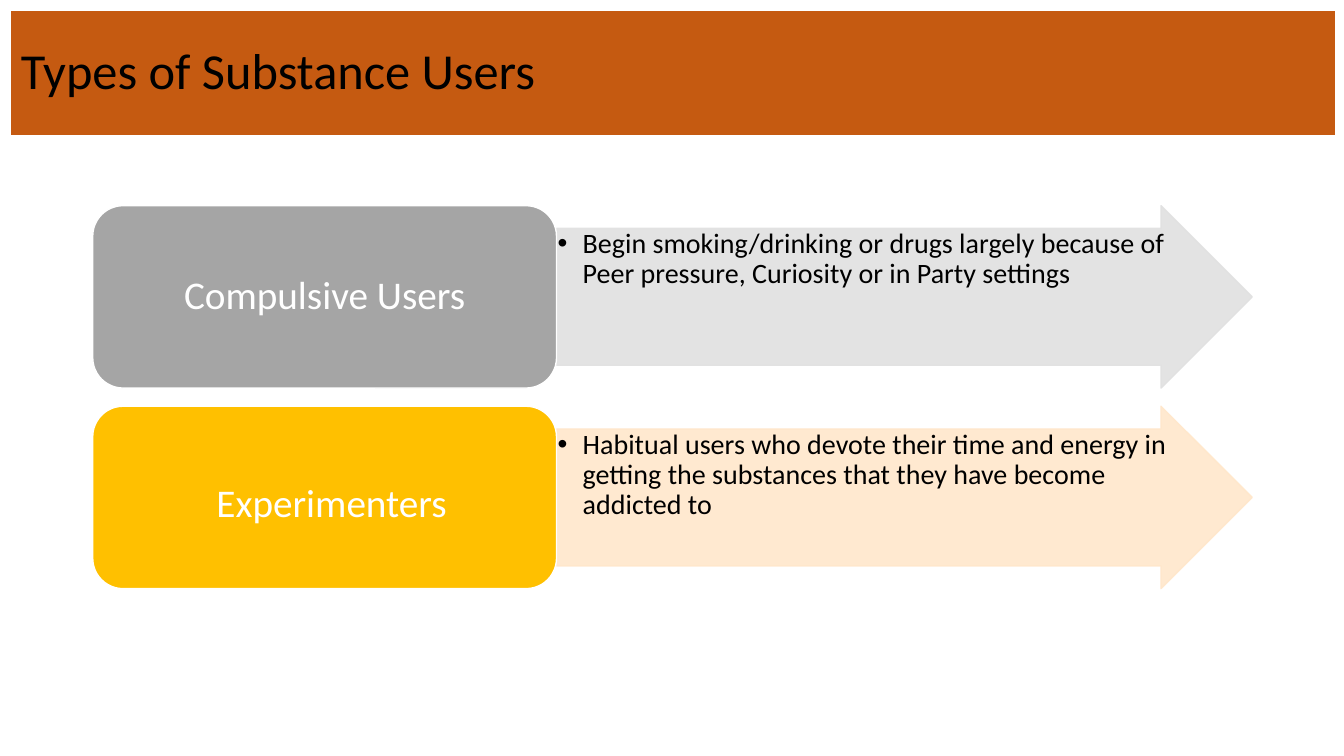
from lxml import etree
from pptx import Presentation
from pptx.dml.color import RGBColor
from pptx.enum.shapes import MSO_SHAPE as SHAPE
from pptx.enum.text import MSO_ANCHOR as ANCHOR, PP_ALIGN as ALIGN
from pptx.oxml.ns import qn
from pptx.util import Emu, Pt

PX = 9144
ROWS = [
    ("A5A5A5", "E1E1E1", [("Compulsive Users", 28)], (12, 6),
     "Begin smoking/drinking or drugs largely because of Peer pressure, "
     "Curiosity or in Party settings"),
    ("FFC000", "FFE7CB", [(" ", 44), ("Experimenters", 28)], (18, 9),
     "Habitual users who devote their time and energy in getting the "
     "substances that they have become addicted to"),
]


def px(n):
    return Emu(round(n * PX))


def color(value):
    return RGBColor.from_string(value)


def add_box(s, kind, box, fill, line=None):
    sp = s.shapes.add_shape(kind, *map(px, box))
    sp.shadow.inherit = False
    sp.fill.solid()
    sp.fill.fore_color.rgb = color(fill)
    if line:
        sp.line.color.rgb = color(line)
        sp.line.width = Pt(1)
    else:
        sp.line.fill.background()
    return sp


def add_text(sp, runs, text_color, align, anchor, insets, bullet=False):
    tf = sp.text_frame
    tf.word_wrap = True
    tf.vertical_anchor = anchor
    tf.margin_left = tf.margin_right = px(insets[0])
    tf.margin_top = tf.margin_bottom = px(insets[1])
    p = tf.paragraphs[0]
    p.alignment = align
    p.line_spacing = 0.9
    if bullet:
        pPr = p._p.get_or_add_pPr()
        pPr.set("marL", str(px(25)))
        pPr.set("indent", str(px(-25)))
        etree.SubElement(pPr, qn("a:buFont")).set("typeface", "Arial")
        etree.SubElement(pPr, qn("a:buChar")).set("char", "•")
    for text, size in runs:
        r = p.add_run()
        r.text = text
        r.font.size = Pt(size)
        r.font.name = "Calibri"
        r.font.color.rgb = color(text_color)


def set_alpha(sp, percent):
    for clr in sp._element.spPr.iter(qn("a:srgbClr")):
        etree.SubElement(clr, qn("a:alpha")).set("val", str(percent * 1000))


def add_title(s, box):
    sp = add_box(s, SHAPE.RECTANGLE, box, "C55A11")
    add_text(sp, [("Types of Substance Users", 36)], "000000",
             ALIGN.LEFT, ANCHOR.MIDDLE, (10, 5))


def add_user_row(s, box, fill, tint, label, insets, description):
    x, y, w, h = box
    label_w = w * 0.4
    arrow = add_box(s, SHAPE.RIGHT_ARROW, (x + label_w, y, w - label_w, h), tint, tint)
    arrow.adjustments[0] = 0.75
    arrow.adjustments[1] = 0.5
    set_alpha(arrow, 90)
    add_text(arrow, [(description, 20)], "000000", ALIGN.LEFT, ANCHOR.TOP, (1, 1), True)
    card = add_box(s, SHAPE.ROUNDED_RECTANGLE, (x, y, label_w, h), fill, "FFFFFF")
    add_text(card, label, "FFFFFF", ALIGN.CENTER, ANCHOR.MIDDLE, insets)


def add_user_rows(s, box):
    x, y, w, h = box
    gap = 18
    row_h = (h - gap * (len(ROWS) - 1)) / len(ROWS)
    for i, row in enumerate(ROWS):
        add_user_row(s, (x, y + i * (row_h + gap), w, row_h), *row)


def main():
    prs = Presentation()
    prs.slide_width = px(1333)
    prs.slide_height = px(750)
    s = prs.slides.add_slide(prs.slide_layouts[6])
    add_title(s, (11, 11, 1313, 123))
    add_user_rows(s, (92, 204, 1150, 380))
    prs.save("out.pptx")


if __name__ == "__main__":
    main()
